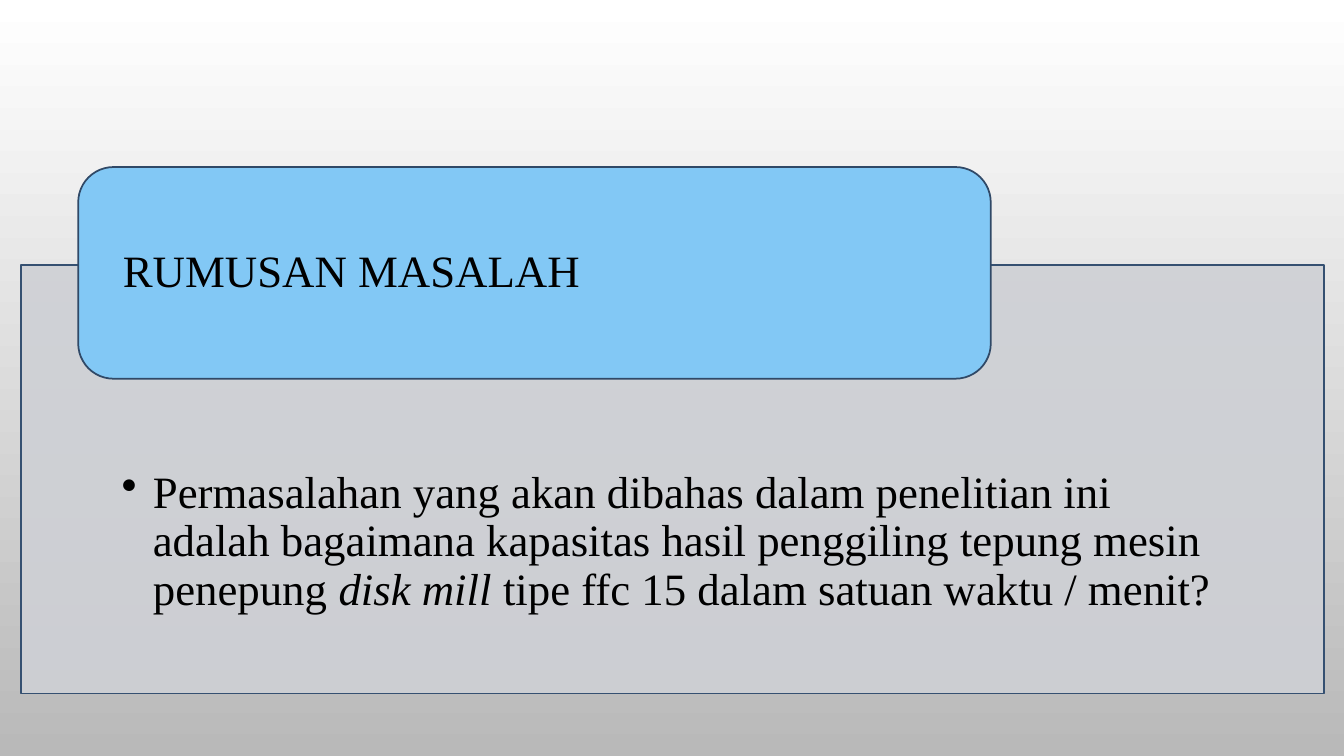
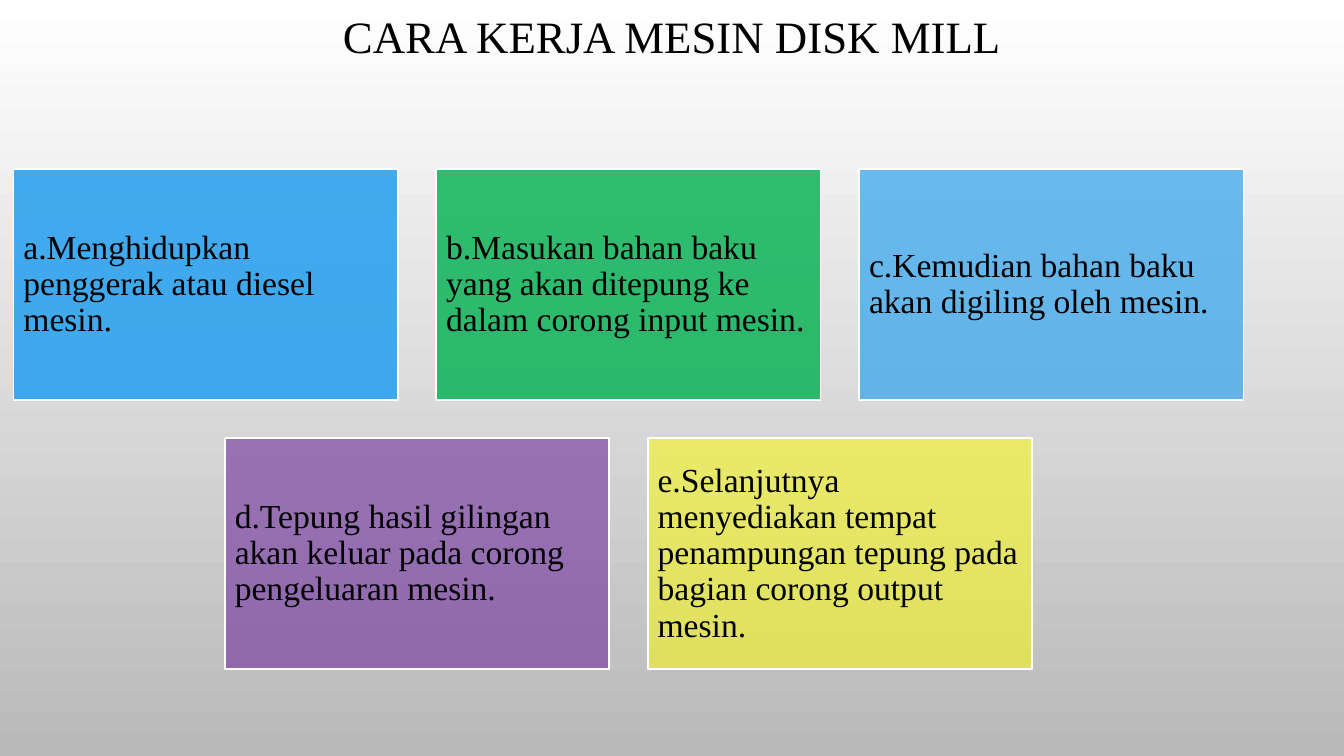
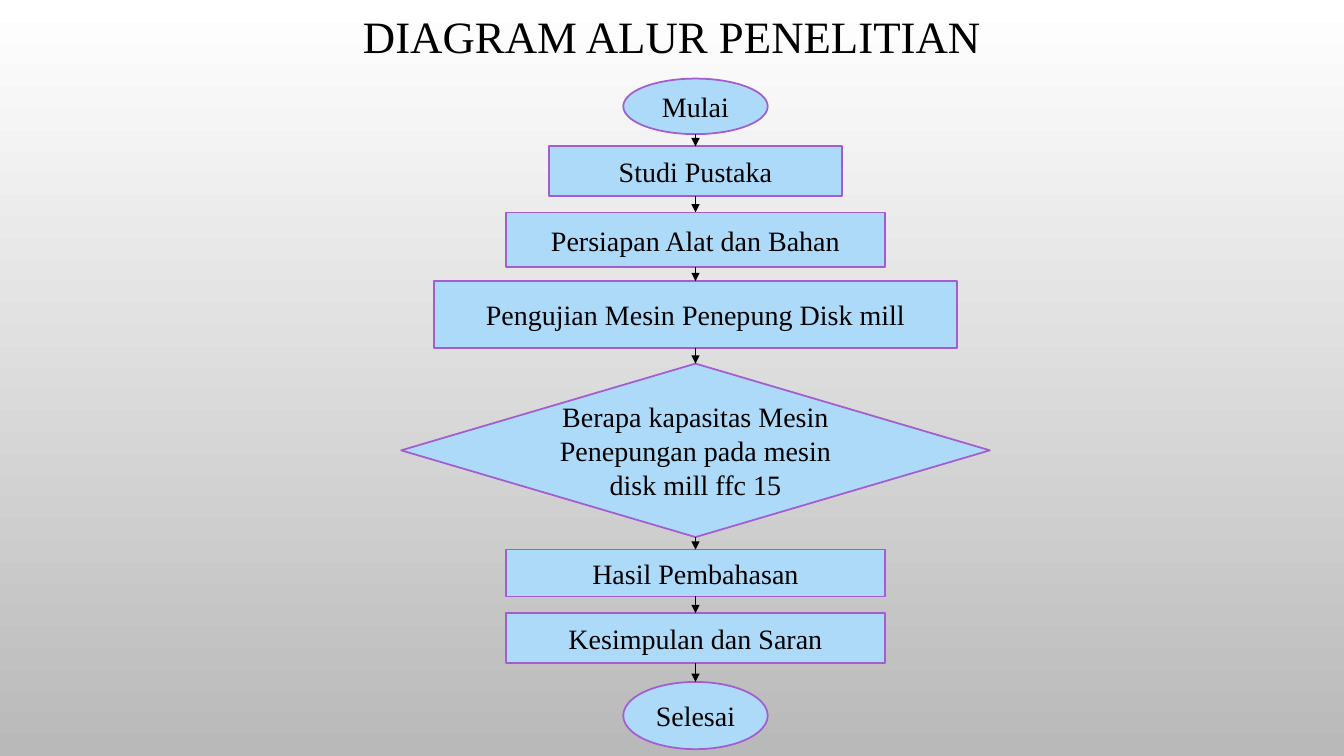
"""Build three slides about a disk mill flour study."""
from itertools import pairwise

from pptx import Presentation
from pptx.dml.color import RGBColor
from pptx.enum.shapes import MSO_CONNECTOR, MSO_SHAPE
from pptx.enum.text import MSO_ANCHOR, PP_ALIGN
from pptx.oxml.ns import qn
from pptx.util import Inches, Pt
from lxml.etree import SubElement

WIDTH, HEIGHT = Inches(13.33), Inches(7.5)
FONT = "Times New Roman"
BLACK = RGBColor(0x00, 0x00, 0x00)
WHITE = RGBColor(0xFF, 0xFF, 0xFF)
GREY = RGBColor(0xB9, 0xB9, 0xB9)
PANEL = RGBColor(0xCE, 0xD0, 0xD5)
PANEL_EDGE = RGBColor(0x35, 0x50, 0x71)
LABEL = RGBColor(0x82, 0xC8, 0xF5)
LABEL_EDGE = RGBColor(0x30, 0x49, 0x67)
BLUE = RGBColor(0x2F, 0xA3, 0xEE)
GREEN = RGBColor(0x00, 0xB0, 0x50)
PURPLE = RGBColor(0x70, 0x30, 0xA0)
YELLOW = RGBColor(0xFF, 0xFF, 0x00)
FLOW = RGBColor(0xAC, 0xDA, 0xF8)
FLOW_EDGE = RGBColor(0xA3, 0x5D, 0xD1)


def across(percent):
    """Return a share of the slide width."""
    return round(WIDTH * percent / 100)


def down(percent):
    """Return a share of the slide height."""
    return round(HEIGHT * percent / 100)


def set_background(master):
    """Give every slide the white to grey gradient."""
    fill = master.background.fill
    fill.gradient()
    fill.gradient_angle = 270
    for stop, position, colour in zip(fill.gradient_stops, (0, 1), (WHITE, GREY)):
        stop.position = position
        stop.color.rgb = colour


def add_page(deck):
    """Add a slide on the blank layout."""
    return deck.slides.add_slide(deck.slide_layouts[6])


def format_paragraph(para, size, align, spacing):
    """Set font, alignment and line spacing of a paragraph."""
    para.alignment = align
    para.line_spacing = spacing
    for span in para.runs:
        span.font.name = FONT
        span.font.size = Pt(size)
        span.font.color.rgb = BLACK


def write(box, text, size, align=PP_ALIGN.LEFT, spacing=0.9):
    """Write one vertically centred paragraph in a box."""
    frame = box.text_frame
    frame.word_wrap = True
    frame.vertical_anchor = MSO_ANCHOR.MIDDLE
    frame.text = text
    format_paragraph(frame.paragraphs[0], size, align, spacing)


def set_margins(frame, left, top, right, bottom):
    """Set the text insets in inches."""
    frame.margin_left, frame.margin_top = Inches(left), Inches(top)
    frame.margin_right, frame.margin_bottom = Inches(right), Inches(bottom)


def add_title(page, text):
    """Add the centred slide title."""
    box = page.shapes.add_textbox(across(7.5), 0, across(85), down(10.3))
    write(box, text, 32, PP_ALIGN.CENTER)


def add_block(page, kind, place, fill, edge, opacity=100):
    """Add an outlined preset shape."""
    block = page.shapes.add_shape(kind, *place)
    block.shadow.inherit = False
    block.fill.solid()
    block.fill.fore_color.rgb = fill
    block.line.color.rgb = edge
    block.line.width = Pt(1.25)
    if opacity < 100:
        colour = block.element.spPr.find(qn("a:solidFill"))[0]
        SubElement(colour, qn("a:alpha"), val=str(opacity * 1000))
    return block


def add_bullet(para):
    """Give a paragraph a hanging bullet."""
    properties = para._p.get_or_add_pPr()
    properties.set("marL", str(Inches(0.31)))
    properties.set("indent", str(-Inches(0.31)))
    SubElement(properties, qn("a:buChar"), char="•")


def add_arrow(page, x, top, bottom):
    """Add a downward arrow."""
    arrow = page.shapes.add_connector(MSO_CONNECTOR.STRAIGHT, x, top, x, bottom)
    arrow.line.color.rgb = BLACK
    arrow.line.width = Pt(0.75)
    SubElement(arrow.line._get_or_add_ln(), qn("a:tailEnd"), type="triangle")
    SubElement(arrow.element.spPr, qn("a:effectLst"))


def build_problem(page):
    """Show the research question in a labelled panel."""
    place = across(1.55), down(35.05), across(96.95), down(56.7)
    panel = add_block(page, MSO_SHAPE.RECTANGLE, place, PANEL, PANEL_EDGE, 90)
    frame = panel.text_frame
    frame.word_wrap = True
    frame.vertical_anchor = MSO_ANCHOR.TOP
    set_margins(frame, 1, 2.03, 1, 0.22)
    para = frame.paragraphs[0]
    add_bullet(para)
    for text, italic in (
        ("Permasalahan yang akan dibahas dalam penelitian ini adalah bagaimana "
         "kapasitas hasil penggiling tepung mesin penepung ", False),
        ("disk mill ", True),
        ("tipe ffc 15 dalam satuan waktu / menit?", False),
    ):
        span = para.add_run()
        span.text = text
        span.font.italic = italic
    format_paragraph(para, 32, PP_ALIGN.LEFT, 0.9)

    place = across(5.82), down(22.1), across(67.9), down(28)
    label = add_block(page, MSO_SHAPE.ROUNDED_RECTANGLE, place, LABEL, LABEL_EDGE)
    write(label, "RUMUSAN MASALAH", 32)
    set_margins(label.text_frame, 0.34, 0, 0.34, 0)


def build_steps(page):
    """Show the working steps as rows of three and two cards."""
    add_title(page, "CARA KERJA MESIN DISK MILL")
    steps = (
        ("a.Menghidupkan penggerak atau diesel mesin.", BLUE, 90),
        ("b.Masukan bahan baku yang akan ditepung ke dalam corong input mesin.",
         GREEN, 80),
        ("c.Kemudian bahan baku akan digiling oleh mesin.", BLUE, 70),
        ("d.Tepung hasil gilingan akan keluar pada corong pengeluaran mesin.",
         PURPLE, 60),
        ("e.Selanjutnya menyediakan tempat penampungan tepung pada bagian "
         "corong output mesin.", YELLOW, 50),
    )
    width, height, gap = across(28.6), down(30.55), across(2.86)
    for index, (text, colour, opacity) in enumerate(steps):
        row, column = divmod(index, 3)
        left = across(1) + round((column + row / 2) * (width + gap))
        top = down(22.35) + row * (height + gap)
        card = add_block(page, MSO_SHAPE.RECTANGLE, (left, top, width, height),
                         colour, WHITE, opacity)
        write(card, text, 24)
        set_margins(card.text_frame, 0.1, 0.1, 0.1, 0.1)


def build_flow(page):
    """Show the research flow chart."""
    add_title(page, "DIAGRAM ALUR PENELITIAN")
    oval, bar, choice = MSO_SHAPE.OVAL, MSO_SHAPE.RECTANGLE, MSO_SHAPE.DIAMOND
    stages = (
        ("Mulai", oval, 10.75, 10.4, 7.35),
        ("Studi Pustaka", bar, 21.85, 19.35, 6.55),
        ("Persiapan Alat dan Bahan", bar, 28.2, 28.1, 7.25),
        ("Pengujian Mesin Penepung Disk mill", bar, 38.95, 37.2, 8.8),
        ("Berapa kapasitas Mesin Penepungan pada mesin disk mill ffc 15",
         choice, 43.8, 48.1, 22.95),
        ("Hasil Pembahasan", bar, 28.2, 72.7, 6.2),
        ("Kesimpulan dan Saran", bar, 28.2, 81.1, 6.6),
        ("Selesai", oval, 10.75, 90.2, 8.9),
    )
    centre = across(51.75)
    blocks = []
    for text, kind, width, top, height in stages:
        place = centre - across(width / 2), down(top), across(width), down(height)
        block = add_block(page, kind, place, FLOW, FLOW_EDGE)
        write(block, text, 20, PP_ALIGN.CENTER, 1.0)
        blocks.append(block)
    for upper, lower in pairwise(blocks):
        add_arrow(page, centre, upper.top + upper.height, lower.top)


def main():
    """Build and save the deck."""
    deck = Presentation()
    deck.slide_width, deck.slide_height = WIDTH, HEIGHT
    set_background(deck.slide_master)
    for build in (build_problem, build_steps, build_flow):
        build(add_page(deck))
    deck.save("out.pptx")


if __name__ == "__main__":
    main()
